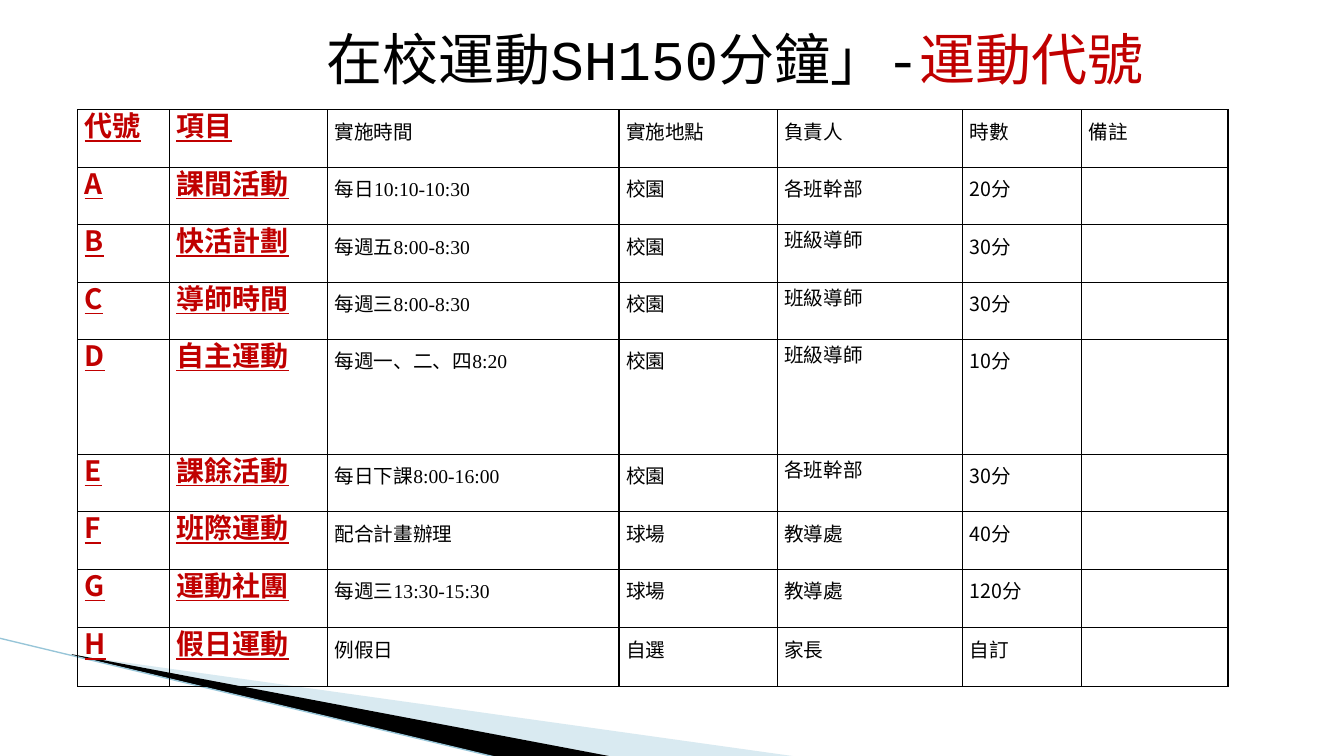
import pptx
import pptx.util
import pptx.dml.color
import pptx.enum.shapes
import pptx.oxml.ns
from lxml import etree

Inches, Pt = pptx.util.Inches, pptx.util.Pt
RGBColor = pptx.dml.color.RGBColor
qn = pptx.oxml.ns.qn

BLACK = RGBColor(0x00, 0x00, 0x00)
RED = RGBColor(0xC0, 0x00, 0x00)
PALE = RGBColor(0xA0, 0xCB, 0xDC)
BLUE = RGBColor(0x97, 0xC5, 0xD8)
SANS = "Noto Sans CJK TC"
SERIF = "Times New Roman"


def style(font, name, size, color):
    """Set the Latin font, the East Asian font, size and colour."""
    font.size = Pt(size)
    font.color.rgb = color
    font.name = name
    etree.SubElement(font._rPr, qn("a:ea"), typeface=SANS)


def wedge(points, color):
    start, *rest = [(Inches(x), Inches(y)) for x, y in points]
    form = shapes.build_freeform(*start)
    form.add_line_segments(rest)
    shape = form.convert_to_shape()
    shape.shadow.inherit = False
    shape.fill.solid()
    shape.fill.fore_color.rgb = color
    shape.line.fill.background()
    return shape


deck = pptx.Presentation()
deck.slide_width, deck.slide_height = Inches(13.33), Inches(7.5)
slide = deck.slides.add_slide(deck.slide_layouts[6])
shapes = slide.shapes

# Corner decoration
pale = wedge([(0.73, 6.5), (7.93, 7.51), (6.08, 7.51)], PALE)
tint = pale.fill._xPr.find(qn("a:solidFill"))[0]
etree.SubElement(tint, qn("a:alpha"), val="40000")
wedge([(0.71, 6.49), (6.09, 7.51), (4.96, 7.52), (0.72, 6.5)], BLACK)
edge = shapes.add_connector(
    pptx.enum.shapes.MSO_CONNECTOR.STRAIGHT,
    Inches(-0.01), Inches(6.33), Inches(4.95), Inches(7.52))
edge.line.color.rgb = BLUE
edge.line.width = Pt(0.95)
etree.SubElement(edge._element.spPr, qn("a:effectLst"))

# Title
title = shapes.add_textbox(Inches(3.14), Inches(0.19), Inches(9.5), Inches(1.08))
title.text_frame.word_wrap = True
para = title.text_frame.paragraphs[0]
para.add_run().text = "在校運動SH150分鐘」-"
code = para.add_run()
code.text = "運動代號"
style(para.font, "Courier New", 40, BLACK)
code.font.color.rgb = RED

# Timetable
rows = [
    ("代號", "項目", "實施時間", "實施地點", "負責人", "時數", "備註"),
    ("A", "課間活動", "每日10:10-10:30", "校園", "各班幹部", "20分", ""),
    ("B", "快活計劃", "每週五8:00-8:30", "校園", "班級導師", "30分", ""),
    ("C", "導師時間", "每週三8:00-8:30", "校園", "班級導師", "30分", ""),
    ("D", "自主運動", "每週一、二、四8:20", "校園", "班級導師", "10分", ""),
    ("E", "課餘活動", "每日下課8:00-16:00", "校園", "各班幹部", "30分", ""),
    ("F", "班際運動", "配合計畫辦理", "球場", "教導處", "40分", ""),
    ("G", "運動社團", "每週三13:30-15:30", "球場", "教導處", "120分", ""),
    ("H", "假日運動", "例假日", "自選", "家長", "自訂", ""),
]
widths = [0.91, 1.57, 2.89, 1.57, 1.84, 1.18, 1.45]
heights = [0.57] * 4 + [1.14] + [0.57] * 2 + [0.58] * 2
table = shapes.add_table(len(rows), len(widths), Inches(0.77), Inches(1.09),
                         Inches(11.41), Inches(5.71)).table
table.first_row = table.horz_banding = False
for col, width in zip(table.columns, widths):
    col.width = Inches(width)
for row, height in zip(table.rows, heights):
    row.height = Inches(height)

for r, row in enumerate(rows):
    for c, text in enumerate(row):
        cell = table.cell(r, c)
        cell.margin_left = cell.margin_right = Inches(0.07)
        cell.margin_top = cell.margin_bottom = 0
        props = cell._tc.get_or_add_tcPr()
        for side in ("lnL", "lnR", "lnT", "lnB"):
            line = etree.SubElement(props, qn(f"a:{side}"), w=str(Pt(1)))
            paint = etree.SubElement(line, qn("a:solidFill"))
            etree.SubElement(paint, qn("a:srgbClr"), val=str(BLACK))
        cell.fill.background()
        if not text:
            continue
        para = cell.text_frame.paragraphs[0]
        if not (c == 4 and 2 <= r <= 5):
            para.line_spacing = Pt(25)
        count = text.removesuffix("分")
        if count.isdigit():
            para.add_run().text = count
            para.runs[0].font.name = SANS
            para.add_run().text = "分"
        else:
            para.add_run().text = text
        key = c < 2
        style(para.font, SANS if c == 0 and r else SERIF,
              20 if key else 14, RED if key else BLACK)
        para.font.bold = para.font.underline = key

deck.save("out.pptx")
